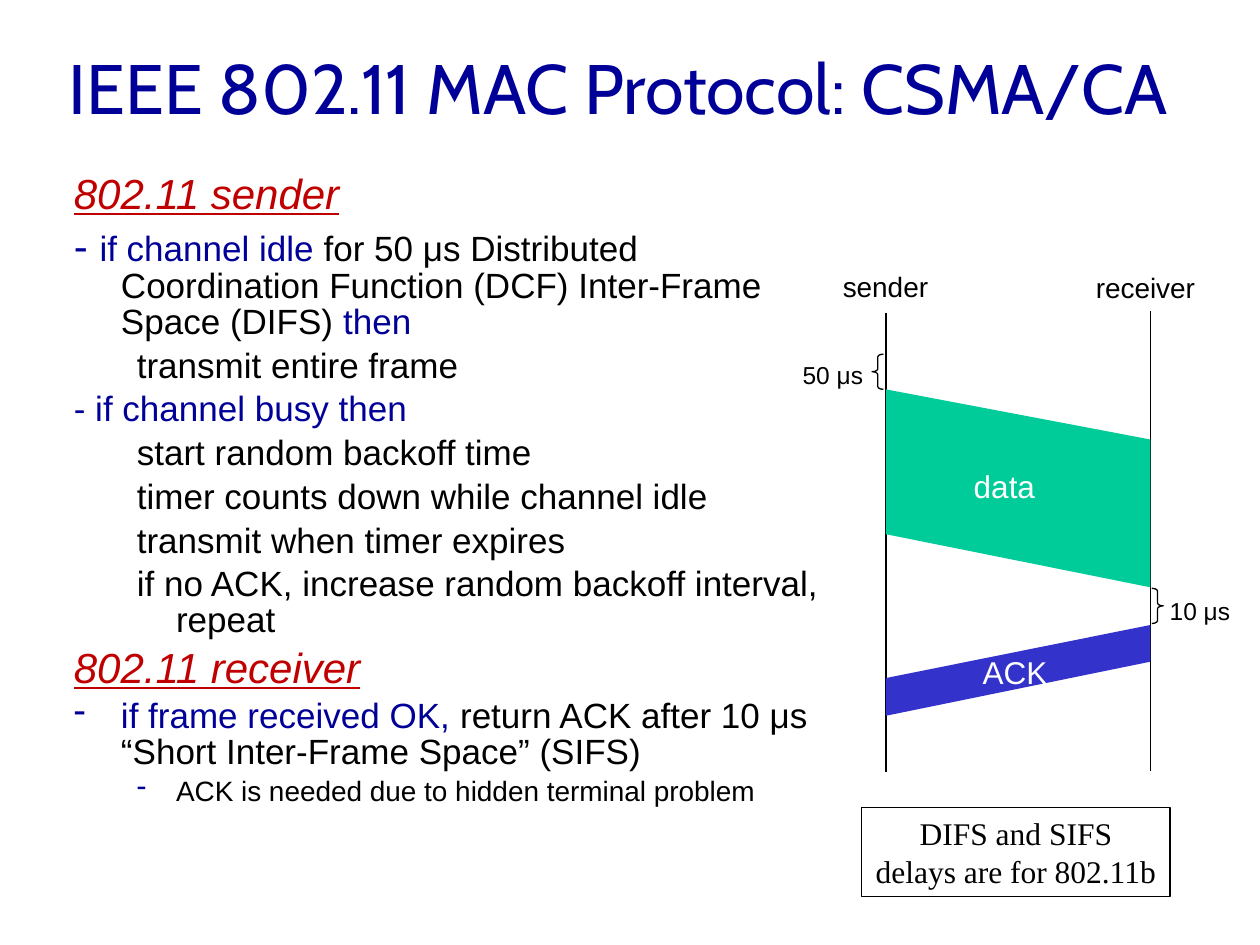
import pptx
import pptx.dml.color
import pptx.enum.shapes
import pptx.enum.text
import pptx.oxml.ns
import pptx.util
from lxml import etree

Cm = pptx.util.Cm
Pt = pptx.util.Pt
SHAPE = pptx.enum.shapes.MSO_SHAPE
ALIGN = pptx.enum.text.PP_ALIGN
ANCHOR = pptx.enum.text.MSO_ANCHOR
COLORS = {
    "navy": "000099", "red": "C00000", "black": "000000",
    "white": "FFFFFF", "data": "00CC99", "ack": "3333CC",
}


def rgb(name):
    return pptx.dml.color.RGBColor.from_string(COLORS[name])


def child(parent, tag, **attrs):
    return etree.SubElement(parent, pptx.oxml.ns.qn(tag), **attrs)


class Deck:
    """Hold the style and the current slide, and add elements to it."""

    font = "Arial"
    line_width = Pt(0.75)
    indents = ((0.95, -0.95), (2.06, -0.79))

    def __init__(self, width, height):
        self.prs = pptx.Presentation()
        self.prs.slide_width, self.prs.slide_height = Cm(width), Cm(height)
        self.s = self.prs.slides.add_slide(self.prs.slide_layouts[6])

    def run(self, p, text, size, color, font=None, heading=False):
        r = p.add_run()
        r.text = text
        r.font.size, r.font.name = Pt(size), font or self.font
        r.font.color.rgb = rgb(color)
        if heading:
            r.font.italic = r.font.underline = True

    def text(self, box, text, size, color="black", font=None, wrap=False):
        sp = self.s.shapes.add_textbox(*map(Cm, box))
        tf = sp.text_frame
        tf.word_wrap = wrap
        self.run(tf.paragraphs[0], text, size, color, font)
        return sp

    def body(self, box, paragraphs):
        tf = self.s.shapes.add_textbox(*map(Cm, box)).text_frame
        tf.word_wrap = True
        for i, (level, bullet, runs) in enumerate(paragraphs):
            p = tf.add_paragraph() if i else tf.paragraphs[0]
            p.level, p.line_spacing = level, 0.85
            p.space_before = Pt(round(0.23 * max(r[1] for r in runs), 1))
            pPr = p._p.get_or_add_pPr()
            left, first = self.indents[level]
            pPr.set("marL", str(Cm(left)))
            pPr.set("indent", str(Cm(first)))
            if bullet:
                child(child(pPr, "a:buClr"), "a:srgbClr", val=COLORS["navy"])
                child(pPr, "a:buChar", char="-")
            for text, size, color in runs:
                self.run(p, text, size, color, heading=color == "red")

    def line(self, x, top, bottom):
        c = self.s.shapes.add_connector(
            pptx.enum.shapes.MSO_CONNECTOR.STRAIGHT,
            Cm(x), Cm(top), Cm(x), Cm(bottom))
        c.line.color.rgb, c.line.width = rgb("black"), self.line_width
        child(c._element.spPr, "a:effectLst")

    def outline(self, kind, box):
        sp = self.s.shapes.add_shape(kind, *map(Cm, box))
        sp.shadow.inherit = False
        sp.fill.background()
        sp.line.color.rgb, sp.line.width = rgb("black"), self.line_width
        return sp

    def brace(self, kind, x, y):
        self.outline(kind, (x, y, 0.23, 0.71)).adjustments[0] = 0.25

    def band(self, points, color):
        start, *rest = [(Cm(x), Cm(y)) for x, y in points]
        fb = self.s.shapes.build_freeform(*start)
        fb.add_line_segments(rest, close=True)
        sp = fb.convert_to_shape()
        sp.shadow.inherit = False
        sp.fill.solid()
        sp.fill.fore_color.rgb = rgb(color)
        sp.line.fill.background()

    def note(self, box, lines):
        tf = self.outline(SHAPE.RECTANGLE, box).text_frame
        tf.word_wrap = False
        for i, text in enumerate(lines):
            p = tf.add_paragraph() if i else tf.paragraphs[0]
            p.alignment = ALIGN.CENTER
            self.run(p, text, 18, "black", "Times New Roman")


def main():
    d = Deck(25.4, 19.05)
    title = d.text((1.14, 0.43, 22.83, 2.64), "IEEE 802.11 MAC Protocol: CSMA/CA",
                   40, "navy", "Cabin", wrap=True)
    title.text_frame.vertical_anchor = ANCHOR.MIDDLE

    def step(text):
        return 1, False, [(text, 20, "black")]

    d.body((1.24, 3.4, 15.65, 13.77), [
        (0, False, [("802.11 sender", 24, "red")]),
        (0, False, [
            ("- ", 24, "navy"),
            ("if channel idle", 20, "navy"),
            (" for 50 μs Distributed Coordination Function (DCF) "
             "Inter-Frame Space (DIFS) ", 20, "black"),
            ("then", 20, "navy")]),
        step("transmit entire frame"),
        (0, False, [("- if channel busy then", 20, "navy")]),
        step("start random backoff time"),
        step("timer counts down while channel idle"),
        step("transmit when timer expires"),
        step("if no ACK, increase random backoff interval, repeat"),
        (0, False, [("802.11 receiver", 24, "red")]),
        (0, True, [
            ("if frame received OK, ", 20, "navy"),
            ("return ACK after 10 μs “Short Inter-Frame Space” (SIFS)",
             20, "black")]),
        (1, True, [("ACK is needed due to hidden terminal problem", 16, "black")]),
    ])

    sender, receiver = 17.86, 23.19
    d.line(sender, 6.3, 15.57)
    d.line(receiver, 6.27, 15.54)
    d.text((16.74, 5.31, 2.31, 0.94), "sender", 16)
    d.text((21.84, 5.33, 2.54, 0.94), "receiver", 16)

    d.brace(SHAPE.LEFT_BRACE, 17.58, 7.14)
    d.text((15.93, 7.14, 1.75, 0.86), "50 μs", 14)
    d.band([(sender, 7.85), (receiver, 8.86), (receiver, 11.84), (sender, 10.77)],
           "data")
    d.text((19.38, 9.3, 1.75, 1.02), "data", 18, "white")

    d.text((23.33, 11.89, 1.75, 0.86), "10 μs", 14)
    d.brace(SHAPE.RIGHT_BRACE, 23.22, 11.86)
    d.band([(sender, 14.43), (receiver, 13.34), (receiver, 12.6), (sender, 13.67)],
           "ack")
    d.text((19.56, 13.03, 1.83, 1.02), "ACK", 18, "white")

    d.note((17.37, 16.28, 6.22, 1.8), ["DIFS and SIFS", "delays are for 802.11b"])
    d.prs.save("out.pptx")


if __name__ == "__main__":
    main()
